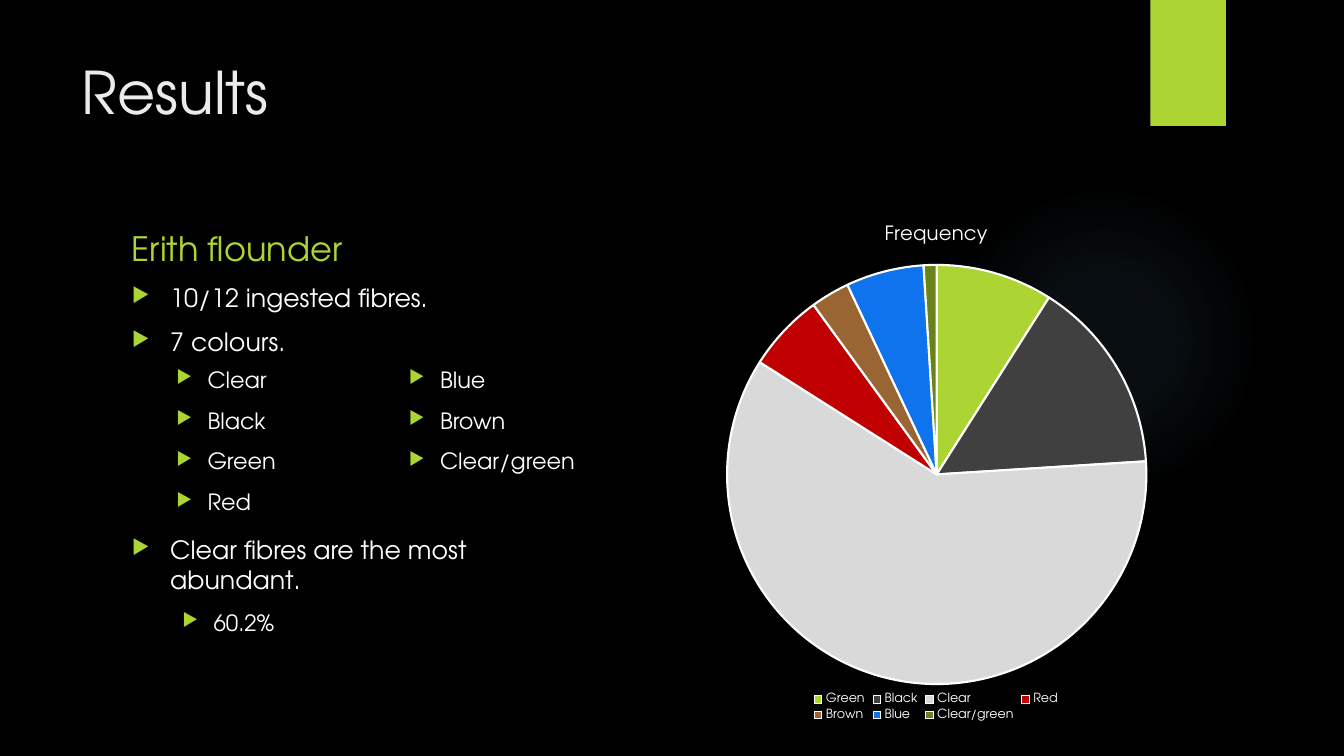
"""Build the Results slide with bullet lists and a frequency pie chart."""
from lxml import etree
from pptx import Presentation
from pptx.chart.data import CategoryChartData
from pptx.dml.color import RGBColor
from pptx.enum.chart import XL_CHART_TYPE as ChartType, XL_LEGEND_POSITION as LegendPosition
from pptx.enum.shapes import MSO_SHAPE as Shape
from pptx.enum.text import MSO_ANCHOR as Anchor, PP_ALIGN as Align
from pptx.oxml import parse_xml
from pptx.oxml.ns import nsdecls, qn
from pptx.util import Inches, Pt

FONT, ACCENT, WHITE = "TeX Gyre Adventor", "ACD433", "FFFFFF"
TITLE, SUBTITLE = "Results", "Erith flounder"
LEVELS = [dict(size=18, left=0.38, hanging=0.38), dict(size=16, left=0.81, hanging=0.31)]
LISTS = [
    dict(at=(1.21, 2.75, 4.81, 0.85), columns=1,
         items=[("10/12 ingested fibres.", 0), ("7 colours.", 0)]),
    dict(at=(1.15, 3.58, 4.81, 1.61), columns=2,
         items=[(name, 1) for name in
                ("Clear", "Black", "Green", "Red", "Blue", "Brown", "Clear/green")]),
    dict(at=(1.21, 5.25, 4.81, 1.59), columns=1,
         items=[("Clear fibres are the most abundant.", 0), ("60.2%", 1)]),
]
CHART_TITLE = "Frequency"
SLICES = [("Green", 9, ACCENT), ("Black", 15, "404040"), ("Clear", 60, "D9D9D9"),
          ("Red", 6, "C00000"), ("Brown", 3, "996633"), ("Blue", 6, "0E73ED"),
          ("Clear/green", 1, "69821B")]
PLOT_AREA = dict(x=0.166, y=0.116, w=0.67, h=0.806)
GLOW_COLOR, GLOW_STOPS = "7AC4F0", [(0, 7), (36, 6), (69, 0)]


def color(value):
    return RGBColor.from_string(value)


def box(values):
    return [Inches(value) for value in values]


def set_font(font, size, value=WHITE):
    for name, setting in dict(name=FONT, size=Pt(size), bold=False).items():
        setattr(font, name, setting)
    font.color.rgb = color(value)


def set_frame(frame, anchor):
    settings = dict(word_wrap=True, vertical_anchor=anchor,
                    margin_left=Inches(0.1), margin_right=Inches(0.1),
                    margin_top=Inches(0.05), margin_bottom=Inches(0.05))
    for name, setting in settings.items():
        setattr(frame, name, setting)


def add_run(paragraph, text, size, value=WHITE):
    paragraph.alignment = Align.LEFT
    run = paragraph.add_run()
    run.text = text
    set_font(run.font, size, value)


def add_bullet(paragraph, left, hanging):
    properties = paragraph._p.get_or_add_pPr()
    properties.set("marL", str(Inches(left)))
    properties.set("indent", str(-Inches(hanging)))
    bullet_color = etree.SubElement(properties, qn("a:buClr"))
    etree.SubElement(bullet_color, qn("a:srgbClr"), val=ACCENT)
    etree.SubElement(properties, qn("a:buSzPct"), val="80000")
    etree.SubElement(properties, qn("a:buChar"), char="▶")


def add_list(slide, at, columns, items):
    frame = slide.shapes.add_textbox(*box(at)).text_frame
    set_frame(frame, Anchor.TOP)
    frame._txBody.bodyPr.set("numCol", str(columns))
    for index, (text, level) in enumerate(items):
        paragraph = frame.add_paragraph() if index else frame.paragraphs[0]
        style = LEVELS[level]
        add_bullet(paragraph, style["left"], style["hanging"])
        paragraph.level = level
        paragraph.space_before = Pt(10 if index else 0)
        add_run(paragraph, text, style["size"])


def add_plain_shape(slide, kind, at):
    shape = slide.shapes.add_shape(kind, *box(at))
    shape.shadow.inherit = False
    shape.line.fill.background()
    shape.fill.solid()
    shape.fill.fore_color.rgb = color(ACCENT)
    return shape


def add_glow(slide):
    glow = add_plain_shape(slide, Shape.OVAL, (9.41, 1.83, 3.08, 3.08))
    stops = "".join(
        f'<a:gs pos="{position * 1000}"><a:srgbClr val="{GLOW_COLOR}">'
        f'<a:alpha val="{alpha * 1000}"/></a:srgbClr></a:gs>'
        for position, alpha in GLOW_STOPS)
    gradient = parse_xml(
        f'<a:gradFill {nsdecls("a")}><a:gsLst>{stops}</a:gsLst><a:path path="circle">'
        '<a:fillToRect l="50000" t="50000" r="50000" b="50000"/></a:path></a:gradFill>')
    properties = glow._element.spPr
    properties.replace(properties.find(qn("a:solidFill")), gradient)


def add_pie(slide):
    data = CategoryChartData()
    data.categories = [name for name, _, _ in SLICES]
    data.add_series(CHART_TITLE, [value for _, value, _ in SLICES])
    chart = slide.shapes.add_chart(
        ChartType.PIE, *box((6.18, 2.03, 6.21, 5.16)), data).chart
    set_font(chart.font, 10)
    chart.has_title = True
    add_run(chart.chart_title.text_frame.paragraphs[0], CHART_TITLE, 14)
    chart.chart_title.include_in_layout = False
    chart.has_legend = True
    chart.legend.position = LegendPosition.BOTTOM
    chart.legend.include_in_layout = False
    set_font(chart.legend.font, 9)
    plot = chart.plots[0]
    plot.vary_by_categories = True
    for index, (_, _, fill) in enumerate(SLICES):
        point = plot.series[0].points[index].format
        point.fill.solid()
        point.fill.fore_color.rgb = color(fill)
        point.line.color.rgb = color(WHITE)
        point.line.width = Pt(1.5)
    plot_area = chart._chartSpace.chart.plotArea
    for old_layout in plot_area.findall(qn("c:layout")):
        plot_area.remove(old_layout)
    layout = etree.Element(qn("c:layout"))
    manual = etree.SubElement(layout, qn("c:manualLayout"))
    etree.SubElement(manual, qn("c:layoutTarget"), val="inner")
    for name in "xy":
        etree.SubElement(manual, qn(f"c:{name}Mode"), val="edge")
    for name, value in PLOT_AREA.items():
        etree.SubElement(manual, qn(f"c:{name}"), val=str(value))
    plot_area.insert(0, layout)


def main():
    presentation = Presentation()
    presentation.slide_width, presentation.slide_height = box((13.33, 7.5))
    slide = presentation.slides.add_slide(presentation.slide_layouts[5])
    slide.background.fill.solid()
    slide.background.fill.fore_color.rgb = color("000000")
    add_glow(slide)
    add_plain_shape(slide, Shape.RECTANGLE, (11.41, 0, 0.75, 1.25))

    title = slide.shapes.title
    title.left, title.top, title.width, title.height = box((0.71, 0.5, 10.29, 1.53))
    set_frame(title.text_frame, Anchor.TOP)
    add_run(title.text_frame.paragraphs[0], TITLE, 42, "EBEBEB")

    subtitle = slide.shapes.add_textbox(*box((1.21, 2.08, 4.81, 0.63))).text_frame
    set_frame(subtitle, Anchor.BOTTOM)
    add_run(subtitle.paragraphs[0], SUBTITLE, 24, ACCENT)

    for bullet_list in LISTS:
        add_list(slide, **bullet_list)
    add_pie(slide)
    presentation.save("out.pptx")


if __name__ == "__main__":
    main()
